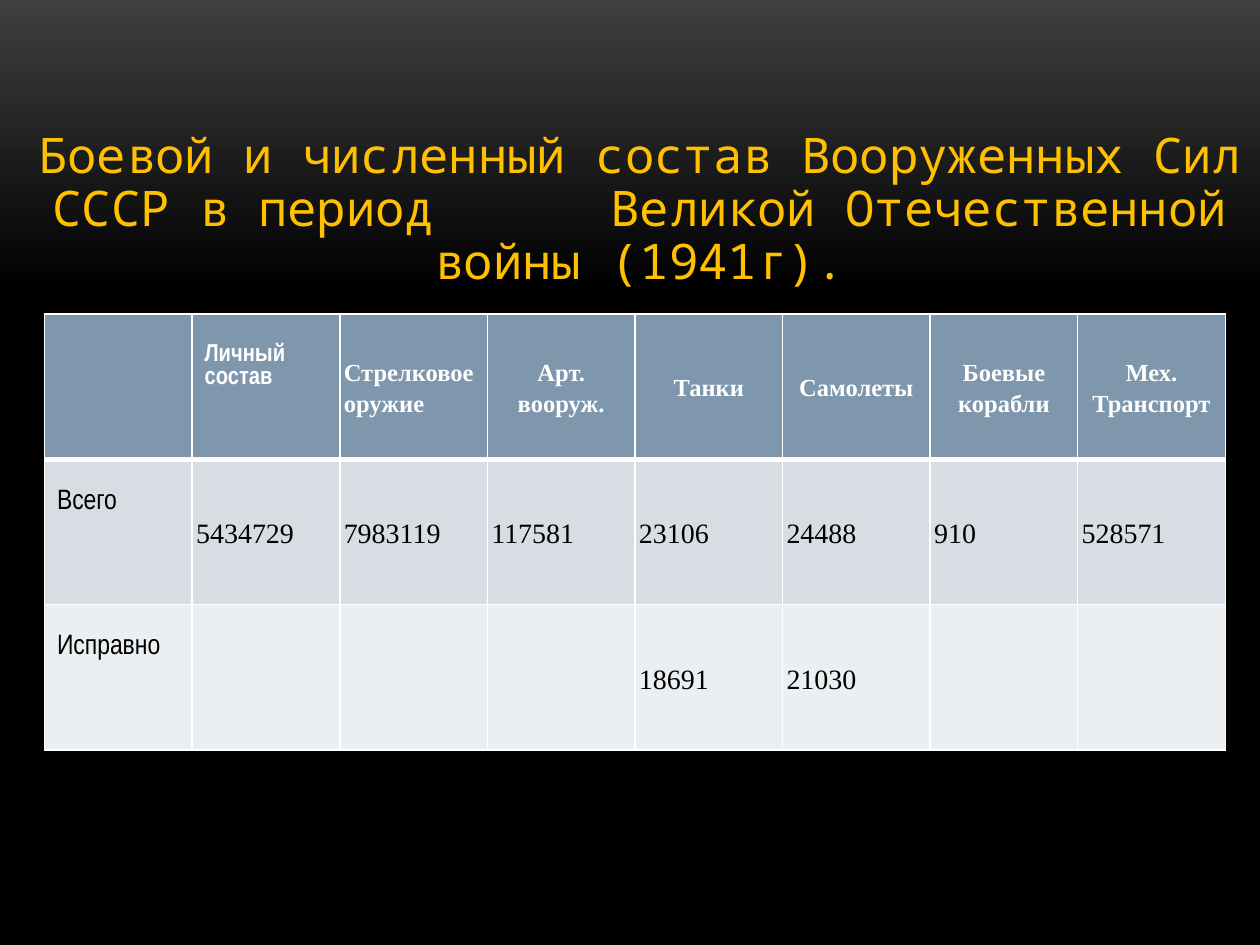
from lxml import etree
from pptx import Presentation
from pptx.dml.color import RGBColor
from pptx.enum.text import MSO_ANCHOR, MSO_AUTO_SIZE, PP_ALIGN
from pptx.oxml.ns import qn
from pptx.util import Cm, Pt

WHITE = RGBColor(0xFF, 0xFF, 0xFF)
BLACK = RGBColor(0x00, 0x00, 0x00)
GREY = RGBColor(0x3F, 0x3F, 0x3F)
GOLD = RGBColor(0xFF, 0xC0, 0x00)
HEADER = RGBColor(0x7E, 0x97, 0xAD)
BANDS = [HEADER, RGBColor(0xD8, 0xDD, 0xE3), RGBColor(0xEC, 0xEF, 0xF1)]

ROWS = [
    ["", "Личный состав", "Стрелковое оружие", "Арт. вооруж.", "Танки",
     "Самолеты", "Боевые корабли", "Мех. Транспорт"],
    ["Всего", "5434729", "7983119", "117581", "23106", "24488", "910", "528571"],
    ["Исправно", "", "", "", "18691", "21030", "", ""],
]
LABELS = ("Личный состав", "Всего", "Исправно")
LABEL_CELL = dict(vertical_anchor=MSO_ANCHOR.TOP, margin_top=Cm(0.6),
                  margin_left=Cm(0.25), margin_right=Cm(0.25))
VALUE_CELL = dict(vertical_anchor=MSO_ANCHOR.MIDDLE, margin_top=Cm(0.03),
                  margin_bottom=Cm(0.03), margin_left=Cm(0.08), margin_right=Cm(0.08))


def apply(obj, formats):
    for name, value in formats.items():
        setattr(obj, name, value)


def add_borders(cell, widths):
    tcPr = cell._tc.get_or_add_tcPr()
    for side, width in widths.items():
        ln = etree.SubElement(tcPr, qn(f"a:ln{side}"), w=str(Pt(width)))
        fill = etree.SubElement(ln, qn("a:solidFill"))
        etree.SubElement(fill, qn("a:srgbClr"), val=str(WHITE))


prs = Presentation()
prs.slide_width, prs.slide_height = Cm(25.4), Cm(19.05)
s = prs.slides.add_slide(prs.slide_layouts[5])

bg = s.background.fill
bg.gradient()
bg.gradient_angle = 270
for stop, color, position in zip(bg.gradient_stops, (GREY, BLACK), (0, 0.31)):
    stop.color.rgb = color
    stop.position = position

# Title, with one widened space as the gap in its second line
title = s.shapes.title
apply(title, dict(left=Cm(0), top=Cm(2.51), width=Cm(25.8), height=Cm(2.64)))
tf = title.text_frame
apply(tf, dict(word_wrap=True, auto_size=MSO_AUTO_SIZE.SHAPE_TO_FIT_TEXT,
               vertical_anchor=MSO_ANCHOR.TOP))
p = tf.paragraphs[0]
apply(p, dict(alignment=PP_ALIGN.CENTER, line_spacing=0.9))
for text, spacing in (("Боевой и численный состав Вооруженных Сил СССР в период", 0),
                      (" ", 84),
                      ("Великой Отечественной войны (1941г).", 0)):
    r = p.add_run()
    r.text = text
    apply(r.font, dict(size=Pt(28), name="Noto Sans Mono"))
    r.font.color.rgb = GOLD
    if spacing:
        r._r.get_or_add_rPr().set("spc", str(spacing * 100))

# Table of forces
table = s.shapes.add_table(len(ROWS), len(ROWS[0]), Cm(0.9), Cm(6.33),
                           Cm(23.8), Cm(8.79)).table
for column in table.columns:
    column.width = Cm(2.975)
for row in table.rows:
    row.height = Cm(2.93)

for i, row in enumerate(ROWS):
    for j, text in enumerate(row):
        cell = table.cell(i, j)
        add_borders(cell, dict(L=1, R=1, T=3 if i == 1 else 1, B=3 if i == 0 else 1))
        cell.fill.solid()
        cell.fill.fore_color.rgb = BANDS[i]
        if not text:
            continue
        is_label = text in LABELS
        apply(cell, LABEL_CELL if is_label else VALUE_CELL)
        p = cell.text_frame.paragraphs[0]
        p.alignment = PP_ALIGN.CENTER if i == 0 and j > 2 else PP_ALIGN.LEFT
        p.line_spacing = 1.0 if is_label else 1.15
        r = p.add_run()
        r.text = text
        apply(r.font, dict(name="Arial Narrow" if is_label else "Times New Roman",
                           size=Pt(14 if i == 0 else 16), bold=i == 0))
        r.font.color.rgb = WHITE if i == 0 else BLACK

prs.save("out.pptx")
